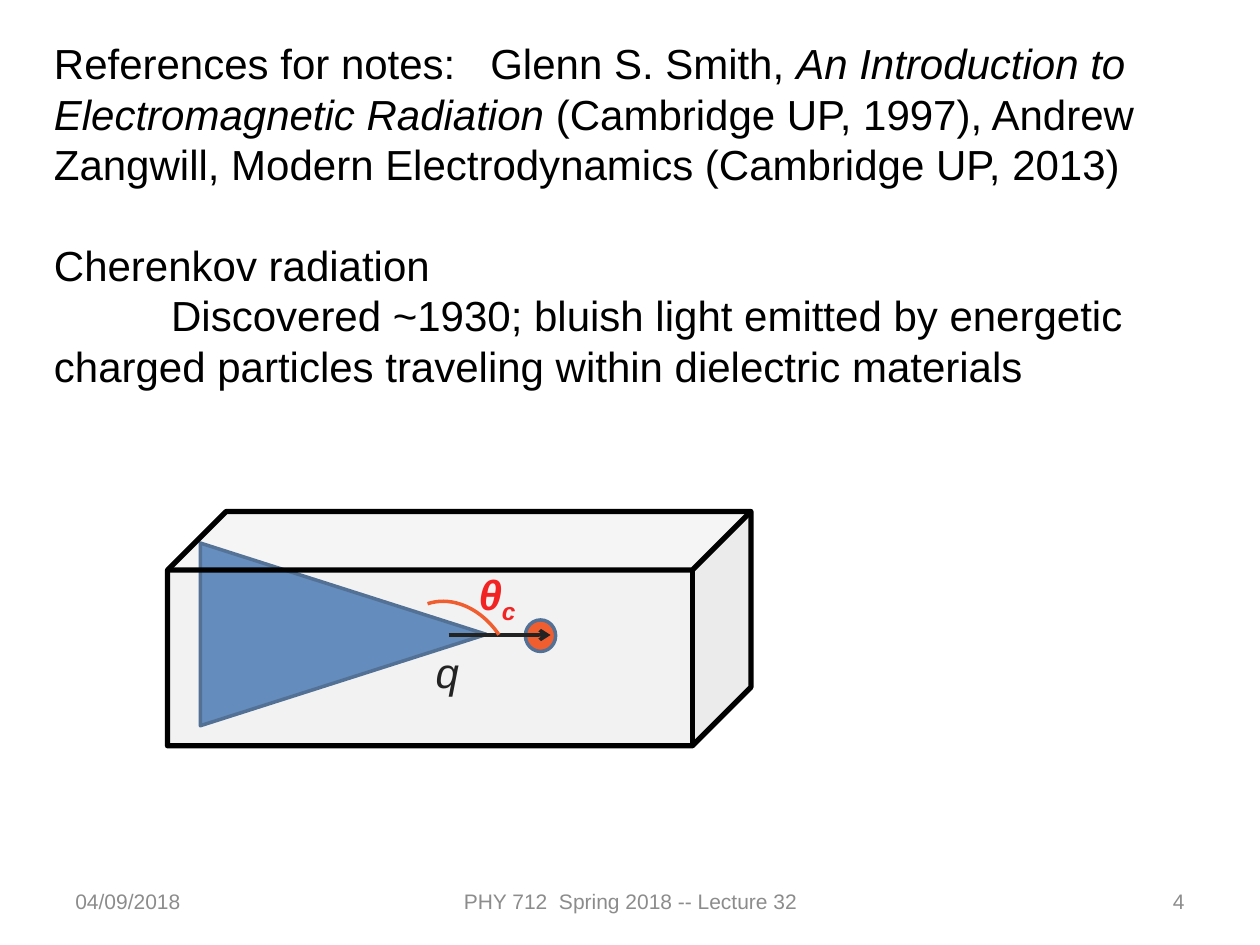
from lxml.etree import SubElement
from pptx import Presentation
from pptx.dml.color import RGBColor
from pptx.enum.shapes import MSO_CONNECTOR, MSO_SHAPE
from pptx.enum.text import MSO_ANCHOR, MSO_AUTO_SIZE, PP_ALIGN
from pptx.oxml.ns import qn
from pptx.util import Inches, Pt

BLACK = RGBColor(0x00, 0x00, 0x00)
GRAY = RGBColor(0x8C, 0x8C, 0x8C)
RED = RGBColor(0xFF, 0x00, 0x00)
ORANGE = RGBColor(0xFC, 0x48, 0x10)
BLUE = RGBColor(0x4F, 0x81, 0xBD)
NAVY = RGBColor(0x3A, 0x5F, 0x8C)
SILVER = RGBColor(0xBF, 0xBF, 0xBF)

ITALIC = {"italic": True}
THETA = {"italic": True, "bold": True}

# Paragraphs: runs of (text, font settings), space before in points, first-line indent in inches
NOTES = [
    ([("References for notes:   Glenn S. Smith, ", {}),
      ("An Introduction to Electromagnetic Radiation", ITALIC),
      (" (Cambridge UP, 1997), Andrew Zangwill, Modern Electrodynamics "
       "(Cambridge UP, 2013)", {})], 0, 0),
    ([("Cherenkov radiation", {})], 28.8, 0),
    ([("Discovered ~1930; bluish light emitted by energetic charged particles "
       "traveling within dielectric materials", {})], 0, 0.93),
]
FOOTERS = [
    ("04/09/2018", 0.5, 2.33, PP_ALIGN.LEFT),
    ("PHY 712  Spring 2018 -- Lecture 32", 3.42, 3.17, PP_ALIGN.CENTER),
    ("4", 7.17, 2.33, PP_ALIGN.RIGHT),
]


def add_run(p, text, size, color, **font):
    r = p.add_run()
    r.text = text
    r.font.name, r.font.size, r.font.color.rgb = "Arial", Pt(size), color
    for name, value in font.items():
        setattr(r.font, name, value)
    return r


def add_box(shapes, at, grow=True):
    tf = shapes.add_textbox(*map(Inches, at)).text_frame
    tf.word_wrap = True
    if grow:
        tf.auto_size = MSO_AUTO_SIZE.SHAPE_TO_FIT_TEXT
    return tf


def add_figure(shapes, kind, at, fill, line, width, rotation=0):
    sp = shapes.add_shape(kind, *map(Inches, at))
    sp.shadow.inherit = False
    sp.rotation = rotation
    if fill is None:
        sp.fill.background()
    else:
        sp.fill.solid()
        sp.fill.fore_color.rgb = fill
    sp.line.color.rgb, sp.line.width = line, Pt(width)
    return sp


def add_arrow(shapes, x1, y1, x2, y2):
    arrow = shapes.add_connector(MSO_CONNECTOR.STRAIGHT, *map(Inches, (x1, y1, x2, y2)))
    arrow.line.color.rgb, arrow.line.width = BLACK, Pt(2)
    sp_pr = arrow._element.spPr
    SubElement(sp_pr.find(qn("a:ln")), qn("a:tailEnd"), type="arrow")
    SubElement(sp_pr, qn("a:effectLst"))


prs = Presentation()
prs.slide_width, prs.slide_height = Inches(10), Inches(7.5)
s = prs.slides.add_slide(prs.slide_layouts[6])

for text, left, width, align in FOOTERS:
    tf = add_box(s.shapes, (left, 6.95, width, 0.4), grow=False)
    tf.vertical_anchor = MSO_ANCHOR.MIDDLE
    p = tf.paragraphs[0]
    p.alignment = align
    add_run(p, text, 12, GRAY)

tf = add_box(s.shapes, (0.33, 0.25, 9, 2.93))
for i, (runs, before, indent) in enumerate(NOTES):
    p = tf.add_paragraph() if i else tf.paragraphs[0]
    if before:
        p.space_before = Pt(before)
    if indent:
        p._p.get_or_add_pPr().set("indent", str(Inches(indent)))
    for text, font in runs:
        add_run(p, text, 24, BLACK, **font)

# Light cone behind the moving charge
cone = s.shapes.add_group_shape().shapes
add_figure(cone, MSO_SHAPE.ISOSCELES_TRIANGLE, (2, 3.9, 1.45, 2.27), BLUE, NAVY, 2, 90)
add_figure(cone, MSO_SHAPE.OVAL, (4.17, 4.92, 0.24, 0.25), ORANGE, NAVY, 2)
add_arrow(cone, 3.56, 5.04, 4.37, 5.04)
add_run(add_box(cone, (3.36, 5.08, 0.73, 0.5)).paragraphs[0], "q", 24, BLACK, **ITALIC)
angle = add_figure(cone, MSO_SHAPE.ARC, (3.1, 4.76, 0.98, 1.25), None, ORANGE, 2, 341.7)
angle.adjustments[0], angle.adjustments[1] = 162, 201.07
p = add_box(cone, (3.7, 4.46, 0.73, 0.5)).paragraphs[0]
add_run(p, "θ", 24, RED, **THETA)
subscript = add_run(p, "c", 24, RED, **THETA)
subscript._r.get_or_add_rPr().set("baseline", "-25000")

# Translucent dielectric block in front
block = add_figure(s.shapes, MSO_SHAPE.CUBE, (1.33, 4.06, 4.63, 1.86), SILVER, BLACK, 3)
fill_color = block._element.spPr.find(qn("a:solidFill"))[0]
SubElement(fill_color, qn("a:alpha"), val="19000")

prs.save("out.pptx")
